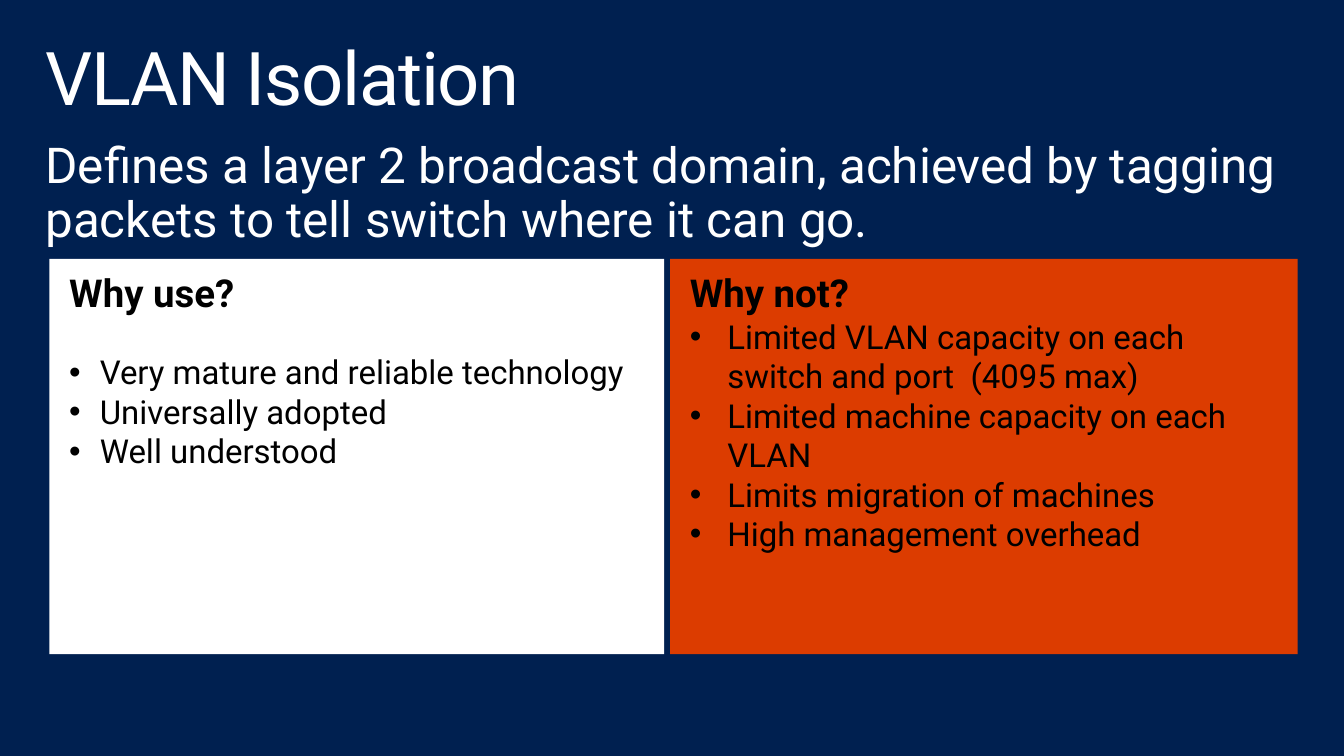
from dataclasses import dataclass

from lxml.etree import SubElement
from pptx import Presentation
from pptx.dml.color import RGBColor
from pptx.enum.shapes import MSO_SHAPE as Shape
from pptx.enum.text import MSO_ANCHOR as Anchor, PP_ALIGN as Align
from pptx.oxml.ns import qn
from pptx.util import Inches, Pt

FONT = "Roboto"
NAVY, WHITE, BLACK, ORANGE = "002050", "FFFFFF", "000000", "DC3C00"


@dataclass
class Panel:
    left: float
    width: float
    fill: str
    heading: str
    heading_gap: float
    indent: float
    points: list[str]


PANELS = [
    Panel(0.5, 6.22, WHITE, "Why use?", 26, 0.31, [
        "Very mature and reliable technology",
        "Universally adopted",
        "Well understood",
    ]),
    Panel(6.78, 6.35, ORANGE, "Why not?", 0, 0.38, [
        "Limited VLAN capacity on each switch and port  (4095 max)",
        "Limited machine capacity on each VLAN",
        "Limits migration of machines",
        "High management overhead",
    ]),
]


def color(value: str) -> RGBColor:
    return RGBColor.from_string(value)


def prepare_frame(shape, horizontal: float, vertical: float):
    frame = shape.text_frame
    frame.word_wrap = True
    frame.vertical_anchor = Anchor.TOP
    frame.margin_left = frame.margin_right = Inches(horizontal)
    frame.margin_top = frame.margin_bottom = Inches(vertical)
    return frame


def write(paragraph, text: str, *, size: float, ink: str, bold: bool = False,
          line_spacing: float = 1.0, space_after: float = 0,
          tracking: float = 0, bullet_indent: float = 0) -> None:
    paragraph.alignment = Align.LEFT
    paragraph.line_spacing = line_spacing
    paragraph.space_after = Pt(space_after)
    run = paragraph.add_run()
    run.text = text
    run.font.name = FONT
    run.font.size = Pt(size)
    run.font.bold = bold
    run.font.color.rgb = color(ink)
    if tracking:
        run.font._element.set("spc", str(round(tracking * 100)))
    if bullet_indent:
        properties = paragraph._p.get_or_add_pPr()
        properties.set("marL", str(Inches(bullet_indent)))
        properties.set("indent", str(-Inches(bullet_indent)))
        SubElement(properties, qn("a:buFont")).set("typeface", "Arial")
        SubElement(properties, qn("a:buChar")).set("char", "•")


def add_text(slide, text: str, top: float, width: float, height: float,
             **text_format) -> None:
    box = slide.shapes.add_textbox(
        Inches(0.3), Inches(top), Inches(width), Inches(height))
    frame = prepare_frame(box, 0.16, 0.1)
    write(frame.paragraphs[0], text, ink=WHITE, line_spacing=0.9, **text_format)


def add_panel(slide, panel: Panel) -> None:
    shape = slide.shapes.add_shape(
        Shape.RECTANGLE, Inches(panel.left), Inches(2.62),
        Inches(panel.width), Inches(4))
    shape.shadow.inherit = False
    shape.fill.solid()
    shape.fill.fore_color.rgb = color(panel.fill)
    shape.line.fill.background()
    frame = prepare_frame(shape, 0.2, 0.16)
    write(frame.paragraphs[0], panel.heading, size=28, ink=BLACK, bold=True,
          line_spacing=0.9, space_after=panel.heading_gap)
    for point in panel.points:
        write(frame.add_paragraph(), point, size=24, ink=BLACK,
              bullet_indent=panel.indent)


def main() -> None:
    presentation = Presentation()
    presentation.slide_width = Inches(13.6)
    presentation.slide_height = Inches(7.65)
    slide = presentation.slides.add_slide(presentation.slide_layouts[6])
    slide.background.fill.solid()
    slide.background.fill.fore_color.rgb = color(NAVY)

    add_text(slide, "VLAN Isolation", 0.32, 13, 1, size=54, tracking=-1)
    add_text(slide, "Defines a layer 2 broadcast domain, achieved by tagging "
             "packets to tell switch where it can go.",
             1.33, 12.82, 1.29, size=36)
    for panel in PANELS:
        add_panel(slide, panel)
    presentation.save("out.pptx")


if __name__ == "__main__":
    main()
